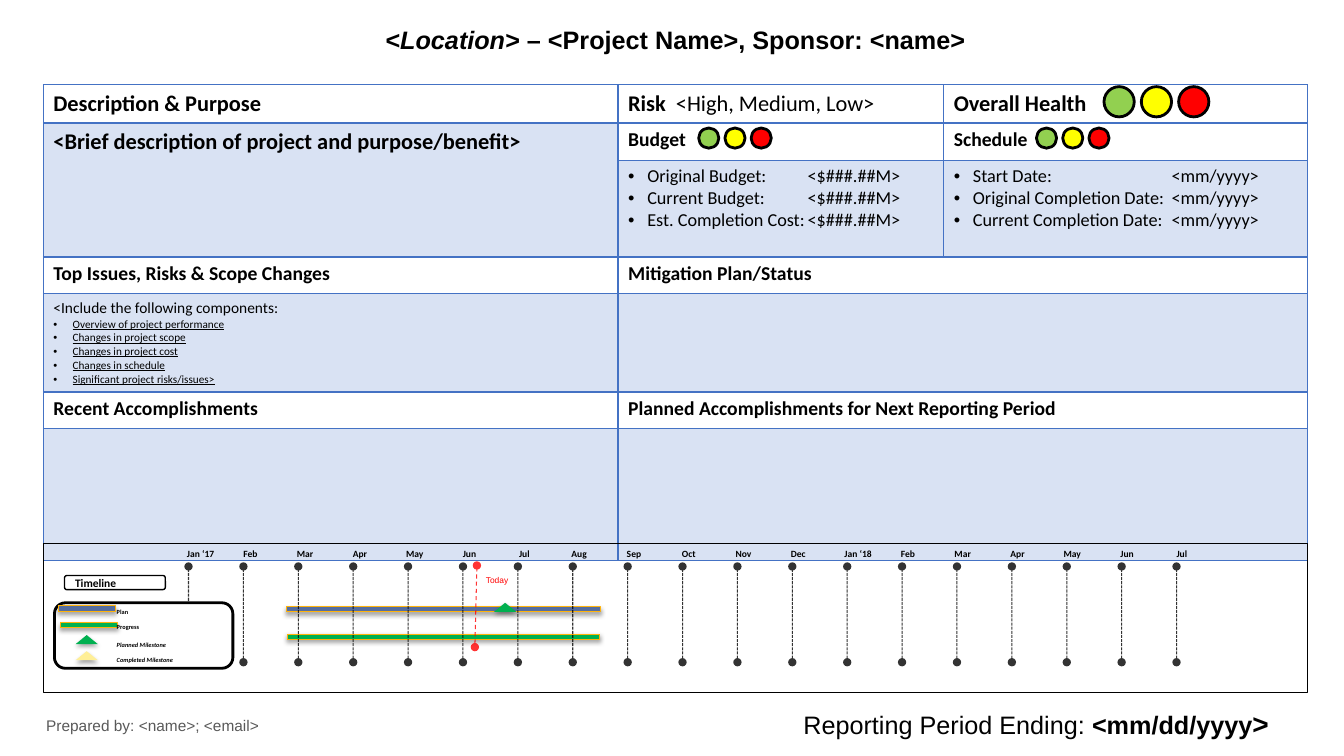
from lxml import etree
from pptx import Presentation
from pptx.dml.color import RGBColor
from pptx.enum.dml import MSO_LINE
from pptx.enum.shapes import MSO_CONNECTOR, MSO_SHAPE
from pptx.enum.text import MSO_ANCHOR, PP_ALIGN
from pptx.oxml.ns import qn
from pptx.util import Inches, Pt

RECT, ROUND, TRIANGLE = MSO_SHAPE.RECTANGLE, MSO_SHAPE.ROUNDED_RECTANGLE, MSO_SHAPE.ISOSCELES_TRIANGLE
LIGHT = MSO_SHAPE.FLOWCHART_CONNECTOR
LEFT, CENTER = PP_ALIGN.LEFT, PP_ALIGN.CENTER
TOP, MIDDLE = MSO_ANCHOR.TOP, MSO_ANCHOR.MIDDLE
DASH, SHORT_DASH = MSO_LINE.DASH, MSO_LINE.SQUARE_DOT

BLACK, WHITE, BLUE, GREEN, RED = "000000", "FFFFFF", "4472C4", "00B050", "FF0000"
PLAN_BLUE, GOLD, PALE_YELLOW, GREY = "556D9F", "FFB30B", "FFEF97", "595959"
LIGHT_COLORS = ["92D050", "FFFF00", RED]

# Content: a paragraph is a list of (text, format) runs
TITLE = [[("<", {}), ("Location", {"italic": True}),
          ("> – <Project Name>, Sponsor: <name>", {})]]
PERIOD = [[("Reporting Period Ending: ", {}), ("<mm/dd/yyyy", {"bold": True}),
           (">", {"bold": True, "size": 20})]]
PREPARED = [[("Prepared by: <name>; <email>", {})]]

HEAD, SUBHEAD = {"size": 16, "bold": True}, {"size": 14, "bold": True}
FIGURES, COMPONENTS = {"size": 13}, {"size": 8, "underline": True}
BUDGET = ["Original Budget:\t<$###.##M>", "Current Budget:\t<$###.##M>",
          "Est. Completion Cost:\t<$###.##M>"]
SCHEDULE = ["Start Date:\t<mm/yyyy>", "Original Completion Date:\t<mm/yyyy>",
            "Current Completion Date:\t<mm/yyyy>"]
INCLUDE = ["Overview of project performance", "Changes in project scope",
           "Changes in project cost", "Changes in schedule",
           "Significant project risks/issues>"]

COLUMNS = [5.7, 3.23, 3.61]
ROWS = [0.38, 0.37, 0.96, 0.36, 0.98, 0.36, 1.31]
MERGES = [((1, 0), (2, 0))] + [((row, 1), (row, 2)) for row in range(3, 7)]
SHADED = {(1, 0), (2, 1), (2, 2), (4, 0), (4, 1), (6, 0), (6, 1)}
HEADINGS = {
    (0, 0): [("Description & Purpose", HEAD)],
    (0, 1): [("Risk  ", HEAD), ("<High, Medium, Low>", {"size": 16})],
    (0, 2): [("Overall Health", HEAD)],
    (1, 0): [("<Brief description of project and purpose/benefit>", HEAD)],
    (1, 1): [("Budget", SUBHEAD)],
    (1, 2): [("Schedule", SUBHEAD)],
    (3, 0): [("Top Issues, Risks & Scope Changes", SUBHEAD)],
    (3, 1): [("Mitigation Plan/Status", SUBHEAD)],
    (4, 0): [("<Include the following components:", {"size": 11})],
    (5, 0): [("Recent Accomplishments", SUBHEAD)],
    (5, 1): [("Planned Accomplishments for Next Reporting Period", SUBHEAD)],
}
# cell: (items, format, tab stop)
BULLETS = {(2, 1): (BUDGET, FIGURES, 1.78), (2, 2): (SCHEDULE, FIGURES, 2.16),
           (4, 0): (INCLUDE, COMPONENTS, None)}

MONTHS = ["Jan ‘17", "Feb", "Mar", "Apr", "May", "Jun", "Jul", "Aug", "Sep", "Oct",
          "Nov", "Dec", "Jan ‘18", "Feb", "Mar", "Apr", "May", "Jun", "Jul"]
BARS = [((2.84, 6.02, 3.12, 0.05), PLAN_BLUE), ((2.85, 6.29, 3.1, 0.05), GREEN)]
LEGEND_BARS = [((0.58, 6.01, 0.57, 0.06), PLAN_BLUE), ((0.6, 6.18, 0.57, 0.05), GREEN)]
LEGEND_MARKS = [(6.3, GREEN), (6.46, PALE_YELLOW)]
LEGEND_TEXTS = [("Plan", 5.98, False), ("Progress", 6.13, False),
                ("Planned Milestone", 6.31, True), ("Completed Milestone", 6.46, True)]
# left, top, diameter, pitch
LIGHT_ROWS = [(10.95, 0.86, 0.3, 0.37), (6.93, 1.27, 0.2, 0.26), (10.28, 1.27, 0.2, 0.26)]

prs = Presentation()
prs.slide_width, prs.slide_height = Inches(13.33), Inches(7.5)
slide = prs.slides.add_slide(prs.slide_layouts[6])


def rgb(value):
    return RGBColor.from_string(value)


def child(parent, tag, **attributes):
    node = etree.SubElement(parent, qn(tag))
    for key, value in attributes.items():
        node.set(key, str(value))
    return node


def add_runs(paragraph, runs, base):
    for text, extra in runs:
        run = paragraph.add_run()
        run.text = text
        for key, value in {**base, **extra}.items():
            if key == "color":
                run.font.color.rgb = rgb(value)
            else:
                setattr(run.font, key, Pt(value) if key == "size" else value)


def add_text(box, paragraphs, base, align=LEFT, anchor=TOP, wrap=True, inset=None, spacing=None):
    frame = slide.shapes.add_textbox(*map(Inches, box)).text_frame
    frame.word_wrap, frame.vertical_anchor = wrap, anchor
    if inset is not None:
        for side in ("left", "top", "right", "bottom"):
            setattr(frame, "margin_" + side, Inches(inset))
    for index, runs in enumerate(paragraphs):
        paragraph = frame.add_paragraph() if index else frame.paragraphs[0]
        paragraph.alignment, paragraph.line_spacing = align, spacing
        add_runs(paragraph, runs, {"name": "Calibri", "color": BLACK, **base})


def add_shape(kind, box, fill=None, line=None, width=1, shadow=False):
    shape = slide.shapes.add_shape(kind, *map(Inches, box))
    shape.shadow.inherit = False
    if fill:
        shape.fill.solid()
        shape.fill.fore_color.rgb = rgb(fill)
    else:
        shape.fill.background()
    if line:
        shape.line.color.rgb, shape.line.width = rgb(line), Pt(width)
    else:
        shape.line.fill.background()
    if shadow:
        effects = shape._element.spPr.find(qn("a:effectLst"))
        outer = child(effects, "a:outerShdw", blurRad=Pt(3.1), dist=Pt(1.8),
                      dir=90 * 60000, rotWithShape=0)
        child(child(outer, "a:srgbClr", val=BLACK), "a:alpha", val=35000)
    return shape


def add_marker_line(start, end, color, dash):
    marker = slide.shapes.add_connector(MSO_CONNECTOR.STRAIGHT, *map(Inches, start + end))
    marker.line.color.rgb, marker.line.width = rgb(color), Pt(0.75)
    marker.line.dash_style = dash
    properties = marker._element.spPr
    outline = properties.find(qn("a:ln"))
    child(next(outline.iter(qn("a:srgbClr"))), "a:alpha", val=80000)
    child(outline, "a:headEnd", type="oval")
    child(outline, "a:tailEnd", type="oval")
    child(properties, "a:effectLst")


def format_cell(cell, row, fill):
    properties = cell._tc.get_or_add_tcPr()
    thick = {0: "a:lnB", 1: "a:lnT"}.get(row)
    for side in ("a:lnL", "a:lnR", "a:lnT", "a:lnB"):
        border = child(properties, side, w=Pt(2 if side == thick else 1))
        child(child(border, "a:solidFill"), "a:srgbClr", val=BLUE)
    if fill:
        cell.fill.solid()
        cell.fill.fore_color.rgb = rgb(fill)
        color = properties.find(qn("a:solidFill")).find(qn("a:srgbClr"))
        child(color, "a:alpha", val=20000)
    else:
        cell.fill.background()


# Title
add_text((0.43, 0.16, 12.54, 0.5), TITLE, {"name": "Arial", "size": 18, "bold": True},
         CENTER, MIDDLE, spacing=0.9)

# Status table
status = slide.shapes.add_table(len(ROWS), len(COLUMNS), *map(
    Inches, (0.43, 0.84, sum(COLUMNS), sum(ROWS)))).table
status.first_row = status.horz_banding = False
for column, width in zip(status.columns, COLUMNS):
    column.width = Inches(width)
for row, height in zip(status.rows, ROWS):
    row.height = Inches(height)
for first, last in MERGES:
    status.cell(*first).merge(status.cell(*last))
for row in range(len(ROWS)):
    for col in range(len(COLUMNS)):
        place, cell = (row, col), status.cell(row, col)
        white = WHITE if place in {(1, 1), (1, 2)} else None
        format_cell(cell, row, BLUE if place in SHADED else white)
        items, style, tab = BULLETS.get(place, ([], {}, None))
        paragraphs = [(HEADINGS[place], False)] if place in HEADINGS else []
        paragraphs += [([(item, style)], True) for item in items]
        for index, (runs, bulleted) in enumerate(paragraphs):
            frame = cell.text_frame
            paragraph = frame.add_paragraph() if index else frame.paragraphs[0]
            if bulleted:
                layout = paragraph._p.get_or_add_pPr()
                layout.set("marL", str(Inches(0.19)))
                layout.set("indent", str(Inches(-0.19)))
                child(layout, "a:buFont", typeface="Arial")
                child(layout, "a:buChar", char="•")
                if tab:
                    child(child(layout, "a:tabLst"), "a:tab", pos=Inches(tab), algn="l")
            add_runs(paragraph, runs, {"name": "Calibri", "color": BLACK, "bold": False})

# Timeline frame, month labels, bars and month lines
add_shape(RECT, (0.43, 5.39, 12.54, 1.48), line=BLACK, width=0.25)
for index, month in enumerate(MONTHS):
    center = 1.94 + 0.5435 * index + (0.05 if month.startswith("Jan") else 0)
    add_text((center - 0.25, 5.44, 0.5, 0.11), [[(month, {})]], {"size": 6.8, "bold": True},
             CENTER, wrap=False, inset=0)
for box, color in BARS:
    add_shape(RECT, box, color, GOLD, 0.75, shadow=True)
add_marker_line((4.71, 6.42), (4.73, 5.61), RED, DASH)
add_text((4.72, 5.66, 0.68, 0.2), [[("Today", {})]], {"name": "Arial", "size": 6, "color": RED})
add_shape(TRIANGLE, (4.9, 5.98, 0.22, 0.09), GREEN, shadow=True)
for index in range(len(MONTHS)):
    x = 1.87 + 0.5444 * index
    add_marker_line((x, 6.57), (x, 5.62), BLACK, SHORT_DASH)

# Timeline tag and legend
tag = add_shape(ROUND, (0.64, 5.71, 1, 0.14), WHITE, BLACK, 1)
tag.text_frame.margin_top = tag.text_frame.margin_bottom = 0
tag.text_frame.vertical_anchor = MIDDLE
tag.text_frame.paragraphs[0].alignment = LEFT
add_runs(tag.text_frame.paragraphs[0], [("Timeline", {})],
         {"name": "Calibri", "size": 8.2, "bold": True, "color": BLACK})
add_shape(ROUND, (0.54, 5.98, 1.77, 0.65), WHITE, BLACK, 2)
for box, color in LEGEND_BARS:
    add_shape(RECT, box, color, GOLD, 0.75, shadow=True)
for top, color in LEGEND_MARKS:
    add_shape(TRIANGLE, (0.75, top, 0.22, 0.09), color, shadow=True)
for label, top, italic in LEGEND_TEXTS:
    add_text((1.06, top, 1.24, 0.18), [[(label, {})]],
             {"size": 4.5, "bold": True, "italic": italic})

# Traffic lights
for left, top, diameter, pitch in LIGHT_ROWS:
    for index, color in enumerate(LIGHT_COLORS):
        add_shape(LIGHT, (left + index * pitch, top, diameter, diameter), color, BLACK, 2)

# Footer
add_text((7.87, 6.96, 5.47, 0.44), PERIOD, {"name": "Arial", "size": 18})
add_text((0.36, 7.06, 3.06, 0.29), PREPARED, {"name": "Arial", "size": 11, "color": GREY})

prs.save("out.pptx")
